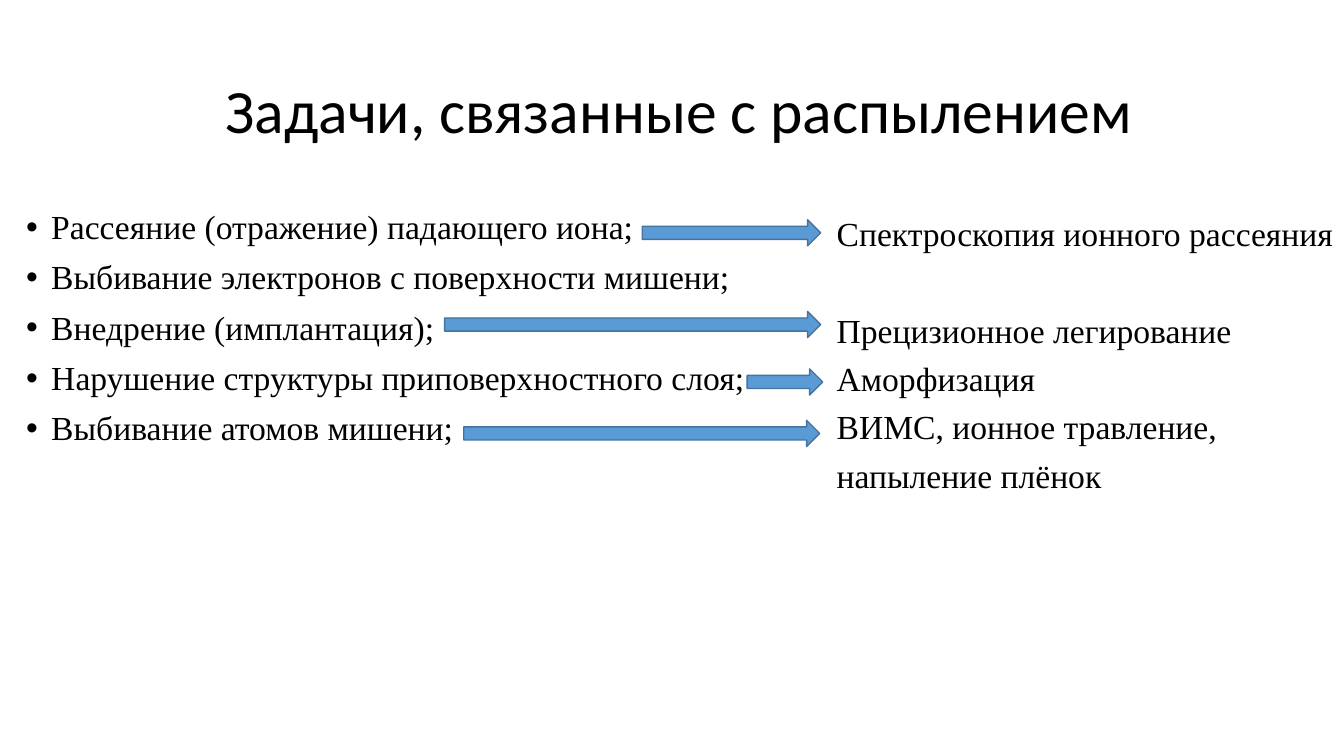
from lxml import etree
from pptx import Presentation
from pptx.dml.color import RGBColor
from pptx.enum.shapes import MSO_SHAPE
from pptx.enum.text import MSO_ANCHOR, PP_ALIGN
from pptx.oxml.ns import qn
from pptx.util import Inches, Pt

RIGHT_ARROW = MSO_SHAPE.RIGHT_ARROW
MIDDLE, TOP = MSO_ANCHOR.MIDDLE, MSO_ANCHOR.TOP
CENTER, LEFT = PP_ALIGN.CENTER, PP_ALIGN.LEFT

BLACK, BLUE, DARK_BLUE = "000000", "5B9BD5", "43739E"
BLANK_LAYOUT = 6
BULLET_INDENT = 0.25
ARROW_HEIGHT = 0.26
SKIPPED_LINE = 34.6  # points: the process in the second row has no application

PROCESSES = [
    "Рассеяние (отражение) падающего иона;",
    "Выбивание электронов с поверхности мишени;",
    "Внедрение (имплантация);",
    "Нарушение структуры приповерхностного слоя;",
    "Выбивание атомов мишени;",
]
# Application and the space before it in points
APPLICATIONS = [
    ("Спектроскопия ионного рассеяния", 0),
    ("Прецизионное легирование", SKIPPED_LINE),
    ("Аморфизация", 0),
    ("ВИМС, ионное травление, напыление плёнок", 0),
]
# Left, top and width of each arrow from a process to its application
ARROWS = [(6.37, 2.18, 1.77), (4.41, 3.09, 3.73), (7.41, 3.66, 0.75), (4.6, 4.17, 3.53)]


def color(hex_code):
    return RGBColor.from_string(hex_code)


def add_bullet(paragraph):
    properties = paragraph._p.get_or_add_pPr()
    indent = Inches(BULLET_INDENT)
    properties.set("marL", str(indent))
    properties.set("indent", str(-indent))
    font = etree.SubElement(properties, qn("a:buFont"))
    font.set("typeface", "Arial")
    etree.SubElement(properties, qn("a:buChar")).set("char", "•")


def add_text(slide, box, lines, size=24, font="Times New Roman", align=LEFT,
             anchor=TOP, line_spacing=1.0, bullets=False):
    """Add a text box; lines holds pairs of text and space before in points."""
    frame = slide.shapes.add_textbox(*map(Inches, box)).text_frame
    frame.word_wrap = True
    frame.vertical_anchor = anchor
    for index, (text, space_before) in enumerate(lines):
        paragraph = frame.add_paragraph() if index else frame.paragraphs[0]
        paragraph.alignment = align
        paragraph.line_spacing = line_spacing
        paragraph.space_before = Pt(space_before)
        if bullets:
            add_bullet(paragraph)
        run = paragraph.add_run()
        run.text = text
        run.font.size = Pt(size)
        run.font.name = font
        run.font.color.rgb = color(BLACK)


def add_title(slide, box):
    add_text(slide, box, [(" Задачи, связанные с распылением", 0)], size=44,
             font="Calibri", align=CENTER, anchor=MIDDLE, line_spacing=0.9)


def add_processes(slide, box):
    add_text(slide, box, [(process, 10) for process in PROCESSES],
             line_spacing=0.9, bullets=True)


def add_applications(slide, box):
    add_text(slide, box, APPLICATIONS, line_spacing=1.2)


def add_arrow(slide, box):
    arrow = slide.shapes.add_shape(RIGHT_ARROW, *map(Inches, box))
    arrow.shadow.inherit = False
    arrow.fill.solid()
    arrow.fill.fore_color.rgb = color(BLUE)
    arrow.line.color.rgb = color(DARK_BLUE)
    arrow.line.width = Pt(1)


def main():
    presentation = Presentation()
    presentation.slide_width = Inches(13.33)
    presentation.slide_height = Inches(7.5)
    slide = presentation.slides.add_slide(presentation.slide_layouts[BLANK_LAYOUT])
    add_title(slide, (0.92, 0.4, 11.5, 1.45))
    add_processes(slide, (0.16, 2.04, 7.52, 4.76))
    add_applications(slide, (8.2, 1.98, 5.17, 3.01))
    for left, top, width in ARROWS:
        add_arrow(slide, (left, top, width, ARROW_HEIGHT))
    presentation.save("out.pptx")


if __name__ == "__main__":
    main()
